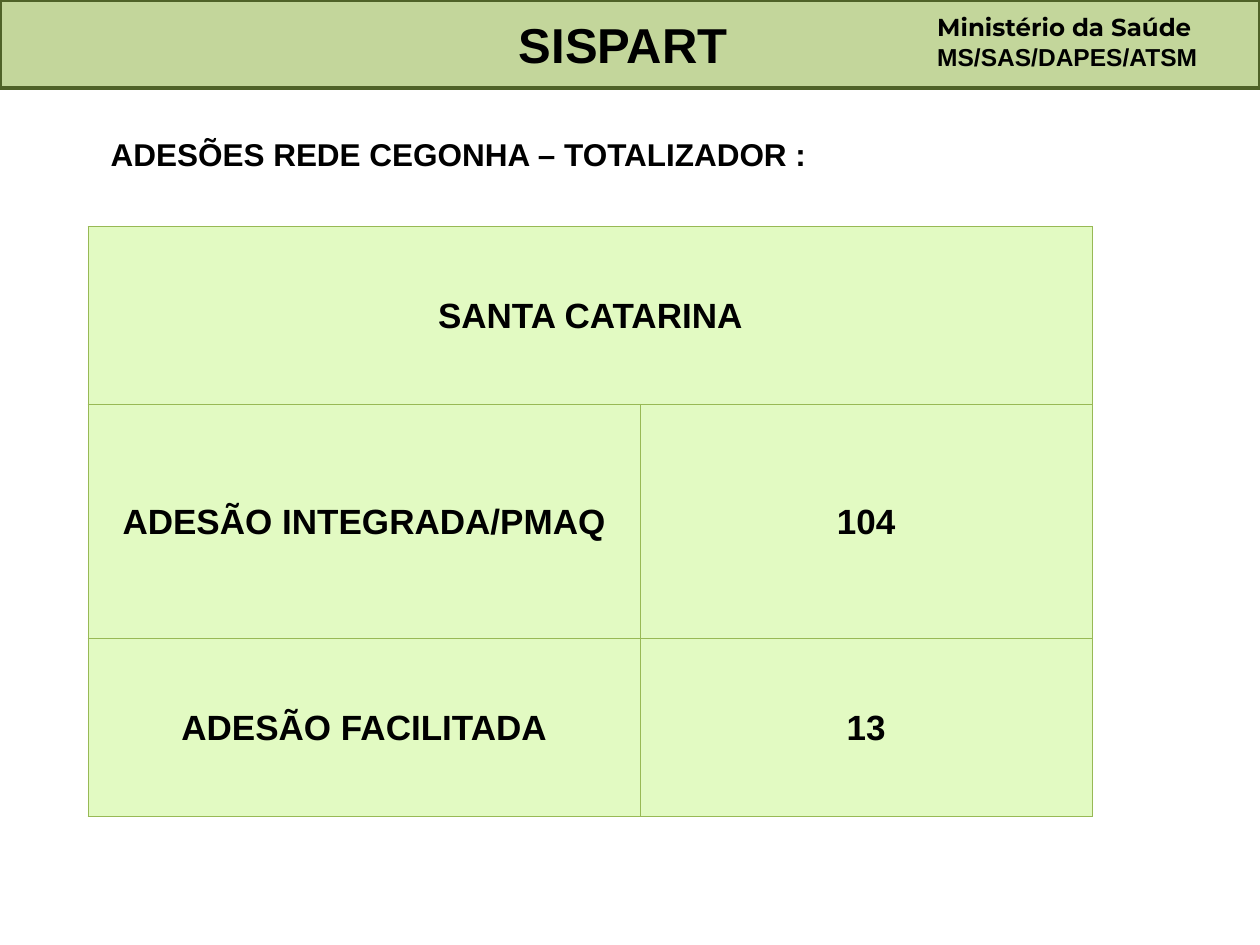
from dataclasses import dataclass

from lxml.etree import SubElement
from pptx import Presentation
from pptx.dml.color import RGBColor
from pptx.enum.text import MSO_ANCHOR, MSO_AUTO_SIZE, PP_ALIGN
from pptx.oxml.ns import qn
from pptx.util import Inches, Pt


@dataclass(frozen=True)
class Theme:
    font: str = "Arial"
    ministry_font: str = "Montserrat"
    text: str = "000000"
    banner: str = "C3D69B"
    banner_line: str = "4F6228"
    cell: str = "E2FAC2"
    cell_border: str = "98B955"
    title_size: int = 28
    table_size: int = 20
    heading_size: int = 18
    ministry_size: int = 14


def grid(*cells):
    """Turn counts of grid columns or rows, ten to the inch, into lengths."""
    return [Inches(cell / 10) for cell in cells]


class SlideBuilder:
    def __init__(self, presentation, theme):
        self.theme = theme
        title_only = presentation.slide_layouts[5]
        self.slide = presentation.slides.add_slide(title_only)

    def style(self, paragraph, size, alignment, font_name=None):
        paragraph.alignment = alignment
        font = paragraph.font
        font.name = font_name or self.theme.font
        font.size = Pt(size)
        font.bold = True
        font.color.rgb = RGBColor.from_string(self.theme.text)

    def banner(self, text, *area):
        title = self.slide.shapes.title
        title.left, title.top, title.width, title.height = grid(*area)
        title.fill.solid()
        title.fill.fore_color.rgb = RGBColor.from_string(self.theme.banner)
        title.line.color.rgb = RGBColor.from_string(self.theme.banner_line)
        title.line.width = Pt(2)
        frame = title.text_frame
        frame.text = text
        frame.auto_size = MSO_AUTO_SIZE.NONE
        frame.vertical_anchor = MSO_ANCHOR.MIDDLE
        self.style(frame.paragraphs[0], self.theme.title_size, PP_ALIGN.CENTER)

    def text_box(self, lines, size, alignment, *area):
        """Add a text box; lines holds pairs of text and font name."""
        frame = self.slide.shapes.add_textbox(*grid(*area)).text_frame
        frame.word_wrap = True
        frame.auto_size = MSO_AUTO_SIZE.SHAPE_TO_FIT_TEXT
        frame.text = "\n".join(text for text, _ in lines)
        for paragraph, (_, font_name) in zip(frame.paragraphs, lines):
            self.style(paragraph, size, alignment, font_name)

    def table(self, heading, rows, left, top, columns, row_heights):
        """Add a table whose first row is one heading across all columns."""
        area = grid(left, top, sum(columns), sum(row_heights))
        table = self.slide.shapes.add_table(
            len(row_heights), len(columns), *area).table
        table.first_row = table.horz_banding = False
        for column, width in zip(table.columns, grid(*columns)):
            column.width = width
        for row, height in zip(table.rows, grid(*row_heights)):
            row.height = height
        table.cell(0, 0).merge(table.cell(0, len(columns) - 1))
        table.cell(0, 0).text = heading
        for row_index, texts in enumerate(rows, start=1):
            for column_index, text in enumerate(texts):
                table.cell(row_index, column_index).text = text
        for cell in table.iter_cells():
            self.format_cell(cell)

    def format_cell(self, cell):
        cell.vertical_anchor = MSO_ANCHOR.MIDDLE
        cell.margin_left = cell.margin_right = cell.margin_top = Inches(0.01)
        cell.margin_bottom = 0
        self.style(cell.text_frame.paragraphs[0], self.theme.table_size,
                   PP_ALIGN.CENTER)
        properties = cell._tc.get_or_add_tcPr()
        for side in ("a:lnL", "a:lnR", "a:lnT", "a:lnB"):
            border = SubElement(properties, qn(side), w=str(Pt(0.75)))
            fill = SubElement(border, qn("a:solidFill"))
            SubElement(fill, qn("a:srgbClr"), val=self.theme.cell_border)
        cell.fill.solid()
        cell.fill.fore_color.rgb = RGBColor.from_string(self.theme.cell)


def main():
    presentation = Presentation()
    presentation.slide_width, presentation.slide_height = grid(100, 75)
    theme = Theme()
    builder = SlideBuilder(presentation, theme)

    builder.banner("SISPART ", 0, 0, 100, 7)
    builder.text_box(
        [("Ministério da Saúde", theme.ministry_font),
         ("MS/SAS/DAPES/ATSM", theme.font)],
        theme.ministry_size, PP_ALIGN.LEFT, 73.4, 0.5, 23.4, 5.7)
    builder.table(
        "SANTA CATARINA",
        [("ADESÃO INTEGRADA/PMAQ", "104"), ("ADESÃO FACILITADA", "13")],
        left=7, top=18, columns=(43.8, 35.9), row_heights=(14.1, 18.6, 14.1))
    builder.text_box(
        [("ADESÕES REDE CEGONHA – TOTALIZADOR :", theme.font)],
        theme.heading_size, PP_ALIGN.JUSTIFY, 7.8, 10.2, 83.6, 4)

    presentation.save("out.pptx")


if __name__ == "__main__":
    main()
